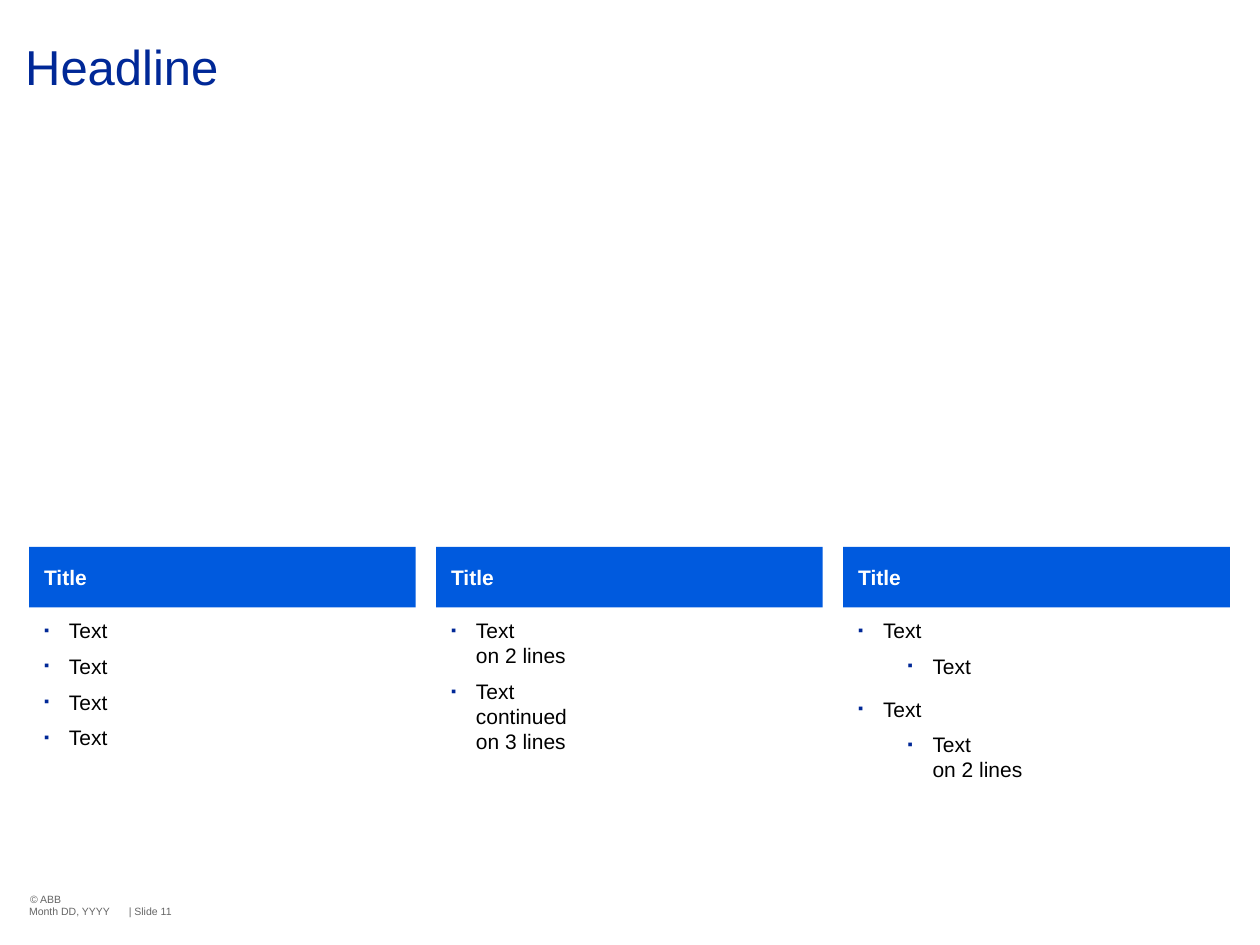
import copy

import pptx
import pptx.dml.color
import pptx.enum.shapes
import pptx.enum.text
import pptx.oxml
import pptx.oxml.ns
import pptx.util
from lxml import etree

Pt = pptx.util.Pt
RGBColor = pptx.dml.color.RGBColor
Anchor = pptx.enum.text.MSO_ANCHOR
qn = pptx.oxml.ns.qn

NAVY = RGBColor(0x00, 0x28, 0x97)
BLUE = RGBColor(0x00, 0x5A, 0xDE)
GREY = RGBColor(0x66, 0x66, 0x66)
BLACK = RGBColor(0, 0, 0)
WHITE = RGBColor(255, 255, 255)

LEFT, PITCH, WIDTH = 16.6, 232.6, 221
HEADER_TOP, HEADER_HEIGHT, LIST_HEIGHT = 312.5, 34.6, 141
PADDING = (8.6, 5.8, 8.6, 5.8)
INDENTS = (14.2, 42.5)

COLUMNS = [
    ("Title", [("Text", 0)] * 4),
    ("Title", [("Text\von 2 lines", 0), ("Text\vcontinued\von 3 lines", 0)]),
    ("Title", [("Text", 0), ("Text", 1), ("Text", 0), ("Text\von 2 lines", 1)]),
]


class SlideBuilder:
    font = "Arial"

    def __init__(self, slide):
        self.s = slide

    def place(self, sp, left, top, width, height):
        sp.left, sp.top = Pt(left), Pt(top)
        sp.width, sp.height = Pt(width), Pt(height)

    def frame(self, sp, insets, anchor=Anchor.TOP, wrap=True):
        tf = sp.text_frame
        tf.auto_size = pptx.enum.text.MSO_AUTO_SIZE.NONE
        tf.word_wrap = wrap
        tf.vertical_anchor = anchor
        tf.margin_left, tf.margin_top, tf.margin_right, tf.margin_bottom = map(Pt, insets)
        return tf

    def set_text(self, p, text, size, color, bold=False):
        p.text = text
        p.alignment = pptx.enum.text.PP_ALIGN.LEFT
        for r in p.runs:
            r.font.name, r.font.size, r.font.bold = self.font, Pt(size), bold
            r.font.color.rgb = color
        for br in p._p.findall(qn("a:br")):
            br.append(copy.deepcopy(p.runs[0]._r.rPr))

    def title(self, text):
        sp = self.s.shapes.title
        self.place(sp, 0, 0, 720, 125)
        p = self.frame(sp, (14.4, 24.5, 17.3, 0)).paragraphs[0]
        self.set_text(p, text, 28, NAVY)
        p.line_spacing = 0.9

    def header(self, text, left):
        sp = self.s.shapes.add_shape(
            pptx.enum.shapes.MSO_SHAPE.RECTANGLE,
            Pt(left), Pt(HEADER_TOP), Pt(WIDTH), Pt(HEADER_HEIGHT))
        sp.shadow.inherit = False
        sp.fill.solid()
        sp.fill.fore_color.rgb = BLUE
        sp.line.fill.background()
        tf = self.frame(sp, PADDING, Anchor.MIDDLE)
        self.set_text(tf.paragraphs[0], text, 12, WHITE, True)

    def bullet(self, p, level):
        pPr = p._p.get_or_add_pPr()
        pPr.set("marL", str(Pt(INDENTS[level])))
        pPr.set("indent", str(-Pt(INDENTS[0])))
        color = etree.SubElement(pPr, qn("a:buClr"))
        etree.SubElement(color, qn("a:srgbClr"), val=str(NAVY))
        etree.SubElement(pPr, qn("a:buSzPct"), val="70000")
        etree.SubElement(pPr, qn("a:buFont"), typeface=self.font)
        etree.SubElement(pPr, qn("a:buChar"), char="▪")

    def bullets(self, sp, items, left):
        self.place(sp, left, HEADER_TOP + HEADER_HEIGHT, WIDTH, LIST_HEIGHT)
        tf = self.frame(sp, PADDING)
        for i, (text, level) in enumerate(items):
            p = tf.add_paragraph() if i else tf.paragraphs[0]
            self.bullet(p, level)
            p.level = level
            p.space_before = Pt(6 if i else 0)
            p.space_after = Pt(4 if level else 0)
            self.set_text(p, text, 12, BLACK)

    def footer(self, text, left, top, width, anchor=Anchor.TOP):
        sp = self.s.shapes.add_textbox(Pt(left), Pt(top), Pt(width), Pt(7.5))
        tf = self.frame(sp, (0, 0, 0, 0), anchor, wrap=False)
        self.set_text(tf.paragraphs[0], text, 6, GREY)


def main():
    prs = pptx.Presentation()
    prs.slide_width, prs.slide_height = Pt(720), Pt(540)
    s = prs.slides.add_slide(prs.slide_layouts.get_by_name("Comparison"))
    builder = SlideBuilder(s)
    builder.title("Headline")
    title, *bodies = s.placeholders
    for i, (heading, items) in enumerate(COLUMNS):
        left = LEFT + i * PITCH
        builder.header(heading, left)
        builder.bullets(bodies[i], items, left)
    for sp in bodies[len(COLUMNS):]:
        sp.element.getparent().remove(sp.element)
    builder.footer("© ABB", 17.2, 510, 88)
    builder.footer("Month DD, YYYY", LEFT, 517, 57.6)
    builder.footer("| Slide 11", 73.6, 517, 38, Anchor.MIDDLE)
    prs.save("out.pptx")


if __name__ == "__main__":
    main()
